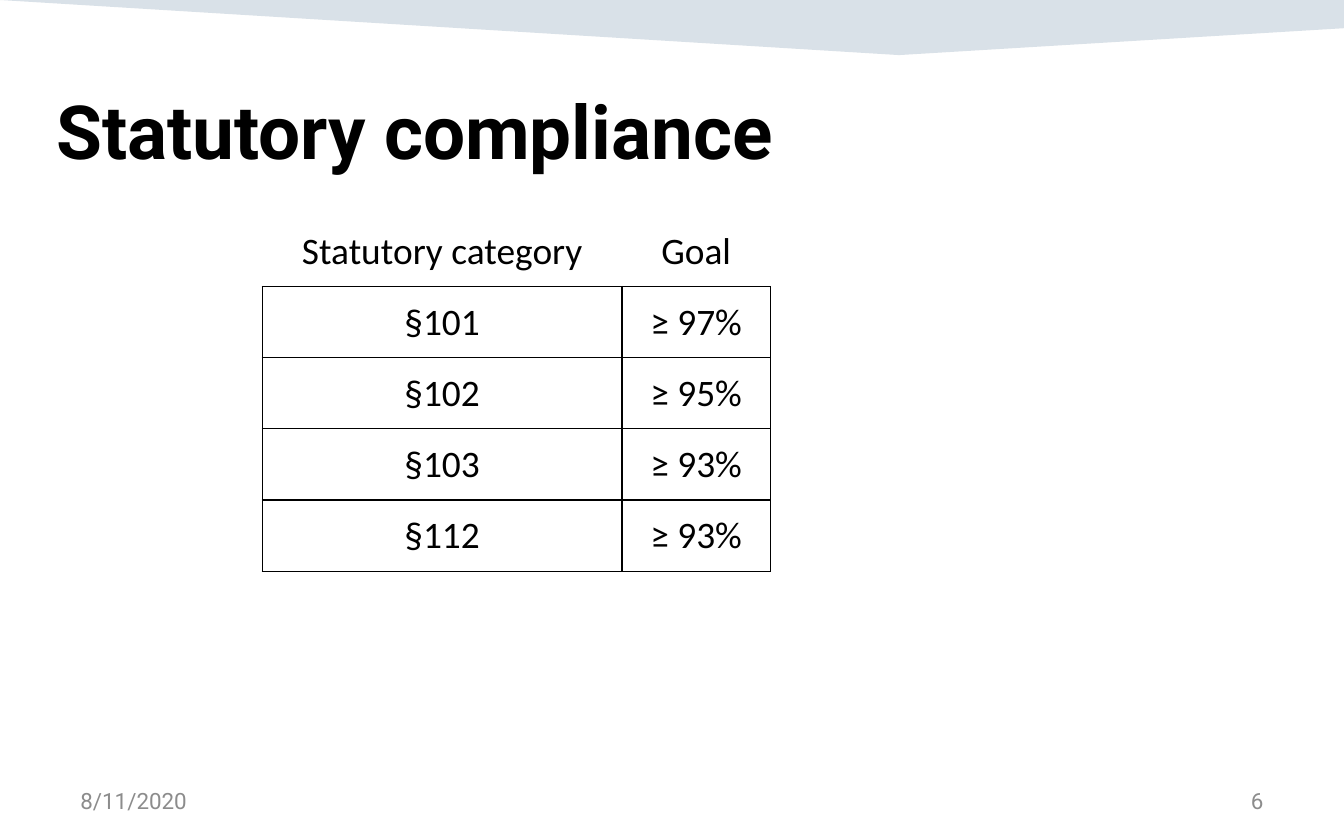
import pptx
import pptx.dml.color
import pptx.enum.text
import pptx.oxml
import pptx.oxml.ns
import pptx.util
from pptx.util import Inches

ALIGN = pptx.enum.text.PP_ALIGN
ANCHOR = pptx.enum.text.MSO_ANCHOR
BLACK, GREY, NAVY = "000000", "8C8C8C", "003865"
ROWS = [
    ("Statutory category", "Goal"),
    ("§101", "≥ 97%"),
    ("§102", "≥ 95%"),
    ("§103", "≥ 93%"),
    ("§112", "≥ 93%"),
]
COL_WIDTHS = (2.68, 1.1)
ROW_HEIGHT = 0.53


def color(hex_text):
    return pptx.dml.color.RGBColor.from_string(hex_text)


def style_paragraph(p, font, size, hex_text, align=ALIGN.LEFT, bold=False):
    p.alignment = align
    p.font.name = font
    p.font.size = pptx.util.Pt(size)
    p.font.bold = bold
    p.font.color.rgb = color(hex_text)


def add_text(s, text, left, top, width, height, size, hex_text,
             anchor=ANCHOR.MIDDLE, **style):
    sp = s.shapes.add_textbox(Inches(left), Inches(top), Inches(width), Inches(height))
    tf = sp.text_frame
    tf.word_wrap = True
    tf.vertical_anchor = anchor
    tf.text = text
    style_paragraph(tf.paragraphs[0], "Roboto", size, hex_text, **style)


def add_band(s, points, hex_text, opacity):
    corners = [(Inches(x), Inches(y)) for x, y in points]
    builder = s.shapes.build_freeform(*corners[0])
    builder.add_line_segments(corners[1:], close=True)
    sp = builder.convert_to_shape()
    sp.shadow.inherit = False
    sp.line.fill.background()
    sp.fill.solid()
    sp.fill.fore_color.rgb = color(hex_text)
    srgb = sp.fill._xPr.find(".//" + pptx.oxml.ns.qn("a:srgbClr"))
    alpha = pptx.oxml.parse_xml(
        f'<a:alpha {pptx.oxml.ns.nsdecls("a")} val="{opacity * 1000}"/>')
    srgb.append(alpha)


def set_borders(cell, widths):
    """Widths in points for left, right, top and bottom; 0 means no line."""
    tc_pr = cell._tc.get_or_add_tcPr()
    for i, (side, width) in enumerate(zip("LRTB", widths)):
        fill = (f'<a:solidFill><a:srgbClr val="{BLACK}"/></a:solidFill>'
                if width else "<a:noFill/>")
        tc_pr.insert(i, pptx.oxml.parse_xml(
            f'<a:ln{side} {pptx.oxml.ns.nsdecls("a")} '
            f'w="{pptx.util.Pt(width)}">{fill}</a:ln{side}>'))


def add_goal_table(s, left, top):
    frame = s.shapes.add_table(
        len(ROWS), len(COL_WIDTHS), Inches(left), Inches(top),
        Inches(sum(COL_WIDTHS)), Inches(ROW_HEIGHT * len(ROWS)))
    table = frame.table
    table.first_row = table.horz_banding = False
    for column, width in zip(table.columns, COL_WIDTHS):
        column.width = Inches(width)
    last_row, last_col = len(ROWS) - 1, len(COL_WIDTHS) - 1
    for i, values in enumerate(ROWS):
        table.rows[i].height = Inches(ROW_HEIGHT)
        for j, text in enumerate(values):
            cell = table.cell(i, j)
            cell.text = text
            cell.vertical_anchor = ANCHOR.MIDDLE
            cell.margin_left = cell.margin_right = cell.margin_top = Inches(0.01)
            cell.margin_bottom = 0
            cell.fill.background()
            style_paragraph(cell.text_frame.paragraphs[0], "Calibri", 20, BLACK,
                            align=ALIGN.CENTER)
            # Thin outer frame, thicker inner grid, open header row
            if i == 0:
                set_borders(cell, (0, 0, 0, 0.5))
            else:
                set_borders(cell, (0.5 if j == 0 else 1,
                                   0.5 if j == last_col else 1,
                                   0.5 if i == 1 else 1,
                                   0.5 if i == last_row else 1))


def main():
    prs = pptx.Presentation()
    prs.slide_width, prs.slide_height = Inches(10), Inches(6.25)
    s = prs.slides.add_slide(prs.slide_layouts[6])

    # Top band
    add_band(s, [(0, 0), (10, 0), (10, 0.21), (6.69, 0.41)], NAVY, 15)

    # Footer: date and slide number
    add_text(s, "8/11/2020", 0.5, 5.79, 2.33, 0.33, 12, GREY)
    add_text(s, "6", 7.17, 5.79, 2.33, 0.33, 12, GREY, align=ALIGN.RIGHT)

    # Title and table
    add_text(s, "Statutory compliance", 0.32, 0.58, 9, 0.53, 40, BLACK,
             anchor=ANCHOR.TOP, bold=True)
    add_goal_table(s, 1.95, 1.6)

    prs.save("out.pptx")


if __name__ == "__main__":
    main()
